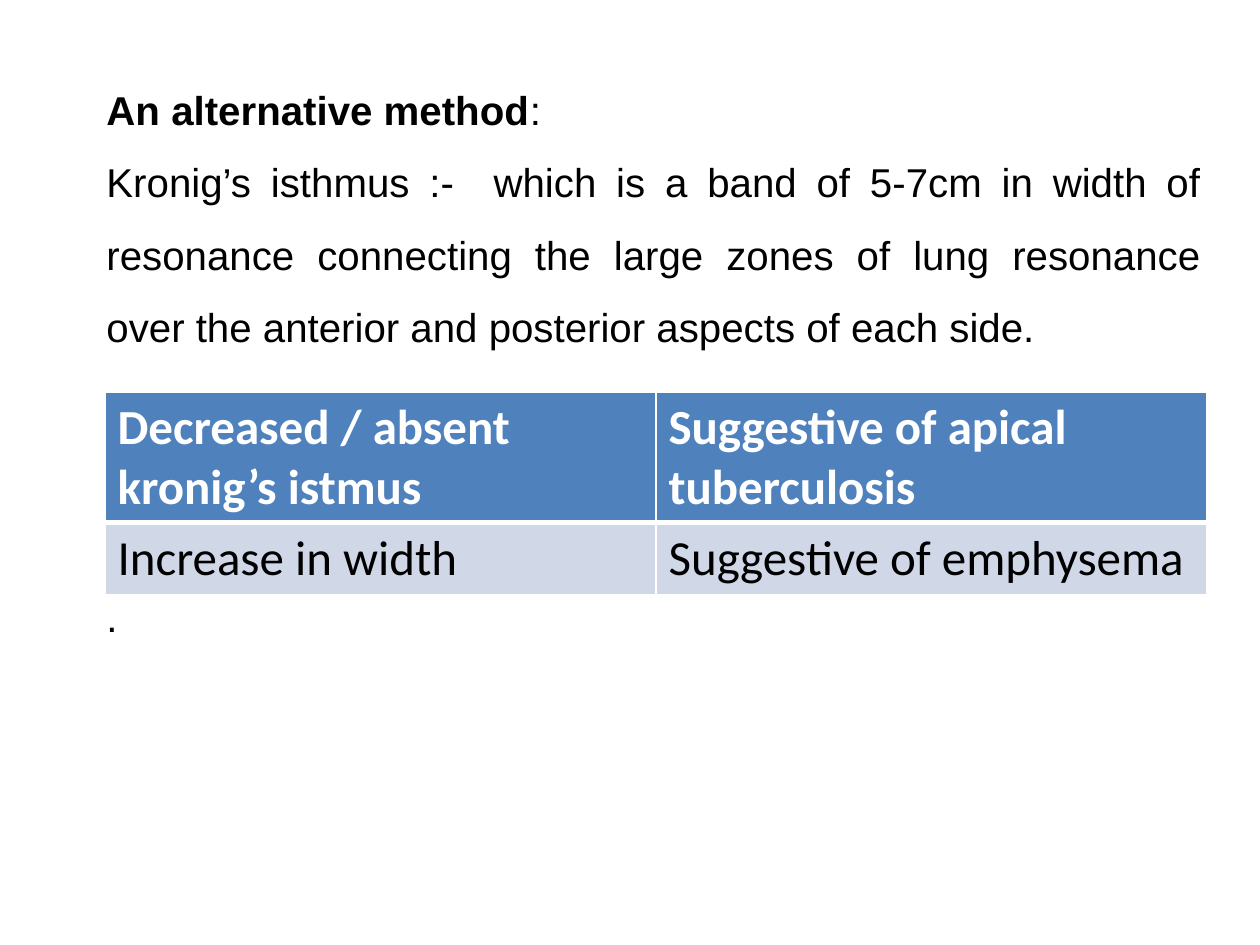
from pptx import Presentation
from pptx.dml.color import RGBColor
from pptx.enum.text import PP_ALIGN, MSO_AUTO_SIZE
from pptx.util import Pt
from lxml.etree import SubElement
from pptx.oxml.ns import qn

SCALE = 914400 // 126


def px(n):
    return n * SCALE


def color(code):
    return RGBColor.from_string(code)


class Deck:
    BLACK, WHITE, HEAD, BAND = "000000", "FFFFFF", "4F81BD", "D0D8E8"

    def __init__(self, wide, high):
        self.prs = Presentation()
        self.prs.slide_width, self.prs.slide_height = px(wide), px(high)
        self.slide = self.prs.slides.add_slide(self.prs.slide_layouts[6])

    def run(self, para, text, code, **style):
        run = para.add_run()
        run.text = text
        for key, value in style.items():
            setattr(run.font, key, value)
        run.font.color.rgb = color(code)

    def prose(self, box, paras):
        """Each paragraph is (space before in points, [(text, bold), ...])."""
        frame = self.slide.shapes.add_textbox(*map(px, box)).text_frame
        frame.word_wrap = True
        frame.auto_size = MSO_AUTO_SIZE.SHAPE_TO_FIT_TEXT
        for i, (gap, runs) in enumerate(paras):
            para = frame.add_paragraph() if i else frame.paragraphs[0]
            form = {"alignment": PP_ALIGN.JUSTIFY, "line_spacing": 1.5,
                    "space_before": Pt(gap)}
            for key, value in form.items():
                setattr(para, key, value)
            for text, bold in runs:
                self.run(para, text, self.BLACK, name="Arial",
                         size=Pt(23), bold=bold)

    def edges(self, cell, widths):
        props = cell._tc.get_or_add_tcPr()
        for i, (side, width) in enumerate(widths.items()):
            line = SubElement(props, qn("a:" + side), w=str(Pt(width)))
            fill = SubElement(line, qn("a:solidFill"))
            SubElement(fill, qn("a:srgbClr"), val=self.WHITE)
            # Borders come before the fill in the cell properties
            props.insert(i, line)

    def table(self, box, heights, rows):
        shape = self.slide.shapes.add_table(
            len(rows), len(rows[0]), *map(px, box))
        grid = shape.table
        for r, texts in enumerate(rows):
            grid.rows[r].height = px(heights[r])
            head = r == 0
            for c, text in enumerate(texts):
                cell = grid.cell(r, c)
                cell.fill.solid()
                cell.fill.fore_color.rgb = color(
                    self.HEAD if head else self.BAND)
                self.run(cell.text_frame.paragraphs[0], text,
                         self.WHITE if head else self.BLACK,
                         name="Calibri", size=Pt(28), bold=head)
                self.edges(cell, {"lnL": 1, "lnR": 1,
                                  "lnT": 1 if head else 3,
                                  "lnB": 3 if head else 1})


def main():
    deck = Deck(1260, 945)

    # Description, with room left for the table before the last line
    deck.prose((94, 55, 1121, 599), [
        (0, [("An alternative method", True), (":", False)]),
        (0, [("Kronig’s isthmus :-  which is a band of 5-7cm in width of "
              "resonance connecting the large zones of lung resonance over "
              "the anterior and posterior aspects of each side.", False)]),
        (124, [(".", False)]),
    ])

    # Findings and what they suggest
    deck.table((105, 392, 1102, 201), (129, 72), [
        ("Decreased / absent kronig’s istmus",
         "Suggestive of apical tuberculosis"),
        ("Increase in width", "Suggestive of emphysema"),
    ])
    deck.prs.save("out.pptx")


if __name__ == "__main__":
    main()
